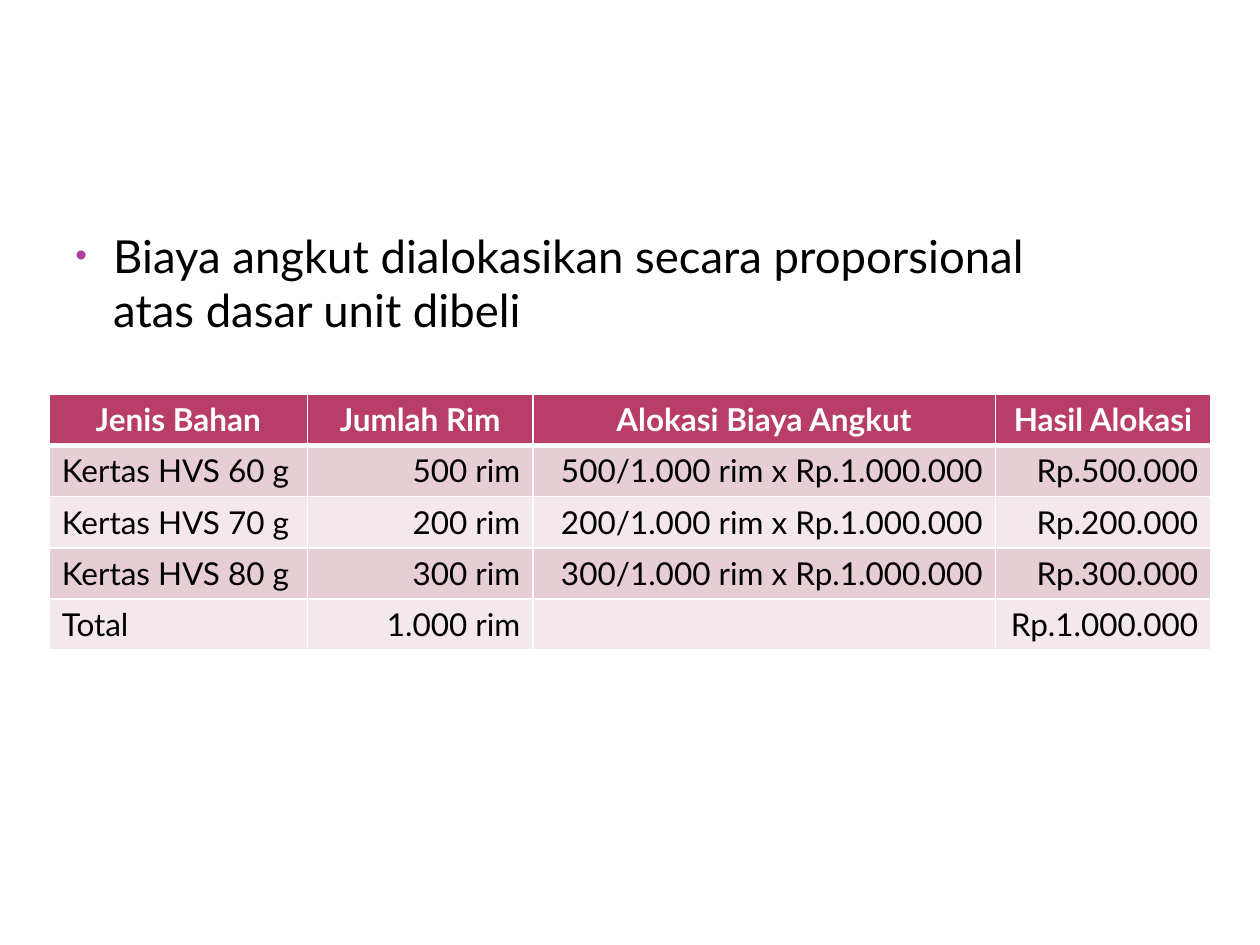
"""Builds the slide on allocating freight cost in proportion to units bought."""
from lxml.etree import SubElement
from pptx import Presentation
from pptx.dml.color import RGBColor
from pptx.enum.text import PP_ALIGN
from pptx.oxml.ns import qn
from pptx.util import Inches, Pt


def color(value):
    return RGBColor.from_string(value)


def write(frame, text, size=18, ink="000000", bold=False, align=PP_ALIGN.LEFT):
    paragraph = frame.paragraphs[0]
    paragraph.alignment = align
    run = paragraph.add_run()
    run.text = text
    run.font.name = "Lato"
    run.font.size = Pt(size)
    run.font.bold = bold
    run.font.color.rgb = color(ink)


presentation = Presentation()
presentation.slide_width = Inches(10)
presentation.slide_height = Inches(7.5)
slide = presentation.slides.add_slide(presentation.slide_layouts[6])

statement = slide.shapes.add_textbox(
    Inches(0.5), Inches(1.76), Inches(7.92), Inches(5.3)).text_frame
statement.word_wrap = True
bullet = statement.paragraphs[0]._p.get_or_add_pPr()
bullet.set("marL", str(Inches(0.3)))
bullet.set("indent", str(Inches(-0.3)))
SubElement(SubElement(bullet, qn("a:buClr")), qn("a:srgbClr"), val="B13F9A")
SubElement(bullet, qn("a:buSzPct"), val="73000")
SubElement(bullet, qn("a:buFont"), typeface="Arial")
SubElement(bullet, qn("a:buChar"), char="•")
write(statement, "Biaya angkut dialokasikan secara proporsional atas dasar unit dibeli", size=26)

allocation_rows = [
    ["Jenis Bahan", "Jumlah Rim", "Alokasi Biaya Angkut", "Hasil Alokasi"],
    ["Kertas HVS 60 g", "500 rim", "500/1.000 rim x Rp.1.000.000", "Rp.500.000"],
    ["Kertas HVS 70 g", "200 rim", "200/1.000 rim x Rp.1.000.000", "Rp.200.000"],
    ["Kertas HVS 80 g", "300 rim", "300/1.000 rim x Rp.1.000.000", "Rp.300.000"],
    ["Total", "1.000 rim", "", "Rp.1.000.000"],
]
column_widths = [2.05, 1.79, 3.67, 1.71]
allocation = slide.shapes.add_table(
    len(allocation_rows), len(column_widths),
    Inches(0.39), Inches(3.13), Inches(sum(column_widths)), Inches(2.03)).table
for column, width in zip(allocation.columns, column_widths):
    column.width = Inches(width)

for row_index, row in enumerate(allocation_rows):
    is_header = row_index == 0
    band = "B83D68" if is_header else ("F3E8EB", "E6CED4")[row_index % 2]
    border_widths = {
        "a:lnL": 1,
        "a:lnR": 1,
        "a:lnT": 3 if row_index == 1 else 1,
        "a:lnB": 3 if is_header else 1,
    }
    for column_index, entry in enumerate(row):
        cell = allocation.cell(row_index, column_index)
        properties = cell._tc.get_or_add_tcPr()
        for side, width in border_widths.items():
            border = SubElement(properties, qn(side), w=str(Pt(width)))
            SubElement(SubElement(border, qn("a:solidFill")), qn("a:srgbClr"), val="FFFFFF")
        cell.fill.solid()
        cell.fill.fore_color.rgb = color(band)
        if is_header:
            write(cell.text_frame, entry, ink="FFFFFF", bold=True, align=PP_ALIGN.CENTER)
        elif entry:
            write(cell.text_frame, entry,
                  align=PP_ALIGN.RIGHT if column_index else PP_ALIGN.LEFT)

presentation.save("out.pptx")
